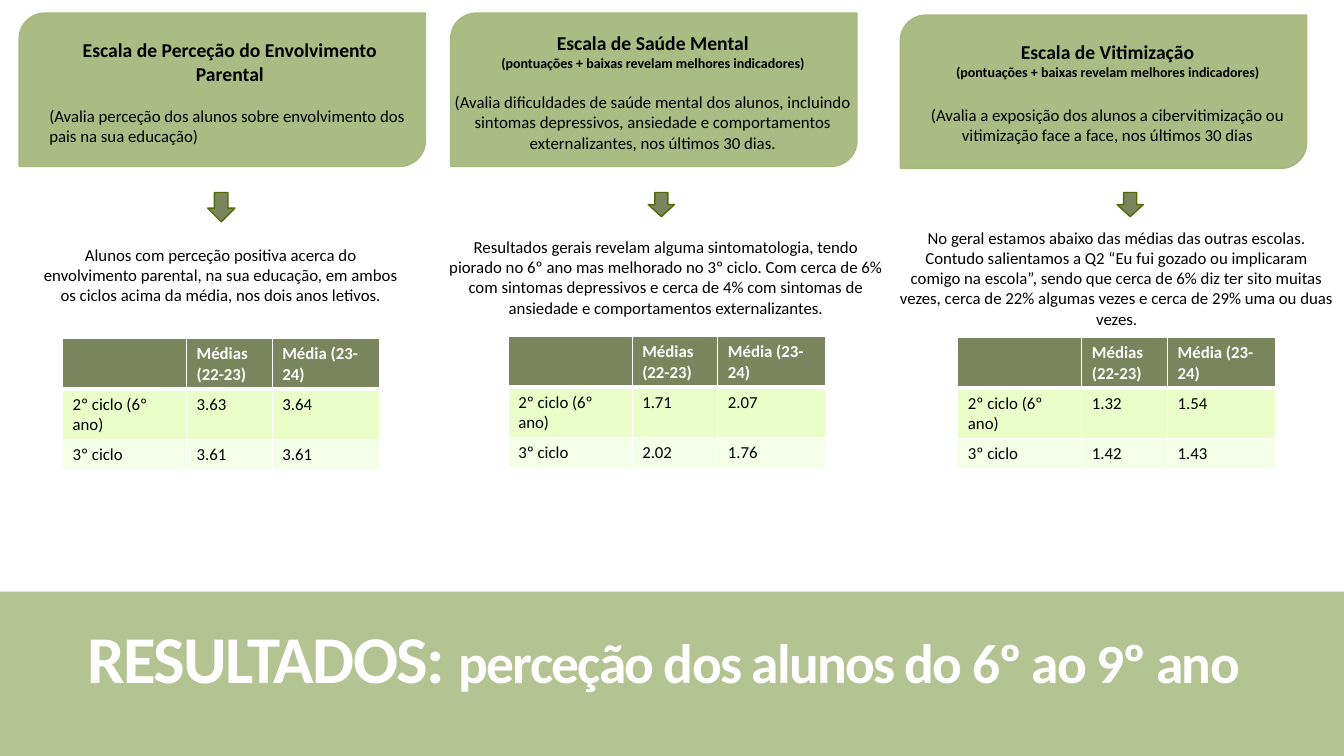
"""Build the slide with the results of three student perception scales."""
import dataclasses
import typing

import lxml.etree
import pptx
import pptx.dml.color
import pptx.enum.shapes
import pptx.enum.text
import pptx.oxml.ns
import pptx.util

PX = 9144
CENTER = pptx.enum.text.PP_ALIGN.CENTER
LEFT = pptx.enum.text.PP_ALIGN.LEFT
SHAPES = pptx.enum.shapes.MSO_SHAPE


@dataclasses.dataclass(frozen=True)
class Theme:
    font: str = "Calibri"
    card: str = "A8B97F"
    dark: str = "7A855D"
    arrow_line: str = "536A08"
    bands: tuple[str, ...] = ("7A855D", "EAFECA", "F5FEE7")
    ink: str = "000000"
    white: str = "FFFFFF"
    heading: float = 14
    note: float = 10
    body: float = 12
    title: float = 47.7
    subtitle: float = 39.6


class Area(typing.NamedTuple):
    left: int
    top: int
    width: int
    height: int

    def emu(self) -> list[int]:
        return [side * PX for side in self]


class Line(typing.NamedTuple):
    text: str
    size: float
    bold: bool = False
    align: pptx.enum.text.PP_ALIGN = CENTER
    before: float = 0


@dataclasses.dataclass(frozen=True)
class Scale:
    card: Area
    heading_area: Area
    heading: list[Line]
    arrow: Area
    finding_area: Area
    findings: list[str]
    table_at: tuple[int, int]
    means: tuple[tuple[str, str], tuple[str, str]]


THEME = Theme()
COLUMNS = (123, 85, 107)
ROWS = (50, 50, 30)
HEADER = ("", "Médias (22-23)", "Média (23-24)")
CYCLES = ("2º ciclo (6º ano)", "3º ciclo")
LOWER_IS_BETTER = Line("(pontuações + baixas revelam melhores indicadores)", THEME.note, True)

SCALES = [
    Scale(
        Area(19, 13, 403, 152), Area(39, 33, 378, 118),
        [Line("Escala de Perceção do Envolvimento Parental", THEME.heading, True),
         Line("(Avalia perceção dos alunos sobre envolvimento dos pais na sua educação)",
              THEME.body, align=LEFT, before=14.6)],
        Area(206, 191, 27, 29), Area(30, 238, 378, 71),
        ["Alunos com perceção positiva acerca do envolvimento parental, na sua educação, "
         "em ambos os ciclos acima da média, nos dois anos letivos."],
        (62, 336), (("3.63", "3.64"), ("3.61", "3.61")),
    ),
    Scale(
        Area(447, 13, 403, 152), Area(429, 26, 437, 131),
        [Line("Escala de Saúde Mental", THEME.heading, True), LOWER_IS_BETTER,
         Line("(Avalia dificuldades de saúde mental dos alunos, incluindo sintomas depressivos, "
              "ansiedade e comportamentos externalizantes, nos últimos 30 dias.",
              THEME.body, before=14.6)],
        Area(643, 191, 26, 24), Area(435, 230, 451, 91),
        ["Resultados gerais revelam alguma sintomatologia, tendo piorado no 6º ano mas "
         "melhorado no 3º ciclo. Com cerca de 6% com sintomas depressivos e cerca de 4% "
         "com sintomas de ansiedade e comportamentos externalizantes."],
        (504, 334), (("1.71", "2.07"), ("2.02", "1.76")),
    ),
    Scale(
        Area(893, 15, 403, 152), Area(886, 35, 425, 114),
        [Line("Escala de Vitimização", THEME.heading, True), LOWER_IS_BETTER,
         Line("(Avalia a exposição dos alunos a cibervitimização ou vitimização face a face, "
              "nos últimos 30 dias", THEME.body, before=17.1)],
        Area(1108, 191, 26, 24), Area(882, 221, 451, 111),
        ["No geral estamos abaixo das médias das outras escolas.",
         "Contudo salientamos a Q2 “Eu fui gozado ou implicaram comigo na escola”, sendo que "
         "cerca de 6% diz ter sito muitas vezes, cerca de 22% algumas vezes e cerca de 29% "
         "uma ou duas vezes."],
        (950, 335), (("1.32", "1.54"), ("1.42", "1.43")),
    ),
]


def rgb(color: str) -> pptx.dml.color.RGBColor:
    return pptx.dml.color.RGBColor.from_string(color)


def paint(shape, color: str, opacity: int = 100) -> None:
    shape.fill.solid()
    shape.fill.fore_color.rgb = rgb(color)
    if opacity < 100:
        tag = pptx.oxml.ns.qn("a:srgbClr")
        node = next(shape.fill._xPr.iter(tag))
        lxml.etree.SubElement(node, pptx.oxml.ns.qn("a:alpha"), val=str(opacity * 1000))


def add_span(para, text: str, size: float, color: str, bold: bool):
    span = para.add_run()
    span.text = text
    span.font.name = THEME.font
    span.font.size = pptx.util.Pt(size)
    span.font.bold = bold
    span.font.color.rgb = rgb(color)
    return span


def add_preset(page, kind, area: Area, fill: str, outline: str, opacity: int = 100):
    shape = page.shapes.add_shape(kind, *area.emu())
    shape.shadow.inherit = False
    paint(shape, fill, opacity)
    shape.line.color.rgb = rgb(outline)
    shape.line.width = pptx.util.Pt(1)
    return shape


def add_lines(page, area: Area, lines: list[Line]) -> None:
    box = page.shapes.add_textbox(*area.emu())
    frame = box.text_frame
    frame.word_wrap = True
    frame.auto_size = pptx.enum.text.MSO_AUTO_SIZE.SHAPE_TO_FIT_TEXT
    for index, line in enumerate(lines):
        para = frame.add_paragraph() if index else frame.paragraphs[0]
        para.alignment = line.align
        para.space_before = pptx.util.Pt(line.before)
        add_span(para, line.text, line.size, THEME.ink, line.bold)


def add_borders(cell, bottom: int) -> None:
    properties = cell._tc.get_or_add_tcPr()
    for side, points in (("L", 1), ("R", 1), ("T", 1), ("B", bottom)):
        border = lxml.etree.SubElement(
            properties, pptx.oxml.ns.qn(f"a:ln{side}"), w=str(pptx.util.Pt(points)))
        fill = lxml.etree.SubElement(border, pptx.oxml.ns.qn("a:solidFill"))
        lxml.etree.SubElement(fill, pptx.oxml.ns.qn("a:srgbClr"), val=THEME.white)


def add_means(page, scale: Scale) -> None:
    area = Area(*scale.table_at, sum(COLUMNS), sum(ROWS))
    table = page.shapes.add_table(len(ROWS), len(COLUMNS), *area.emu()).table
    for column, width in zip(table.columns, COLUMNS):
        column.width = width * PX
    values = [HEADER] + [(cycle, *pair) for cycle, pair in zip(CYCLES, scale.means)]
    for i, texts in enumerate(values):
        table.rows[i].height = ROWS[i] * PX
        for j, text in enumerate(texts):
            cell = table.cell(i, j)
            add_borders(cell, 1 if i else 3)
            paint(cell, THEME.bands[i])
            if text:
                color = THEME.ink if i else THEME.white
                add_span(cell.text_frame.paragraphs[0], text, THEME.body, color, i == 0)


def add_scale(page, scale: Scale) -> None:
    add_preset(page, SHAPES.ROUND_2_DIAG_RECTANGLE, scale.card, THEME.card, THEME.card, 97)
    add_lines(page, scale.heading_area, scale.heading)
    add_preset(page, SHAPES.DOWN_ARROW, scale.arrow, THEME.dark, THEME.arrow_line)
    add_lines(page, scale.finding_area, [Line(text, THEME.body) for text in scale.findings])
    add_means(page, scale)


def fill_title(page) -> None:
    title = page.shapes.title
    title.left, title.top, title.width, title.height = Area(0, 587, 1333, 163).emu()
    paint(title, THEME.card, 85)
    frame = title.text_frame
    frame.word_wrap = True
    frame.auto_size = pptx.enum.text.MSO_AUTO_SIZE.NONE
    frame.vertical_anchor = pptx.enum.text.MSO_ANCHOR.TOP
    frame.margin_left, frame.margin_top = 87 * PX, 37 * PX
    para = frame.paragraphs[0]
    para.alignment = LEFT
    para.line_spacing = 0.85
    for text, size in (("RESULTADOS: ", THEME.title),
                       ("perceção dos alunos do 6º ao 9º ano", THEME.subtitle)):
        span = add_span(para, text, size, THEME.white, True)
        span.font._element.set("spc", "-120")


def main() -> None:
    deck = pptx.Presentation()
    deck.slide_width, deck.slide_height = 1333 * PX, 750 * PX
    page = deck.slides.add_slide(deck.slide_layouts[5])
    fill_title(page)
    for scale in SCALES:
        add_scale(page, scale)
    deck.save("out.pptx")


if __name__ == "__main__":
    main()
